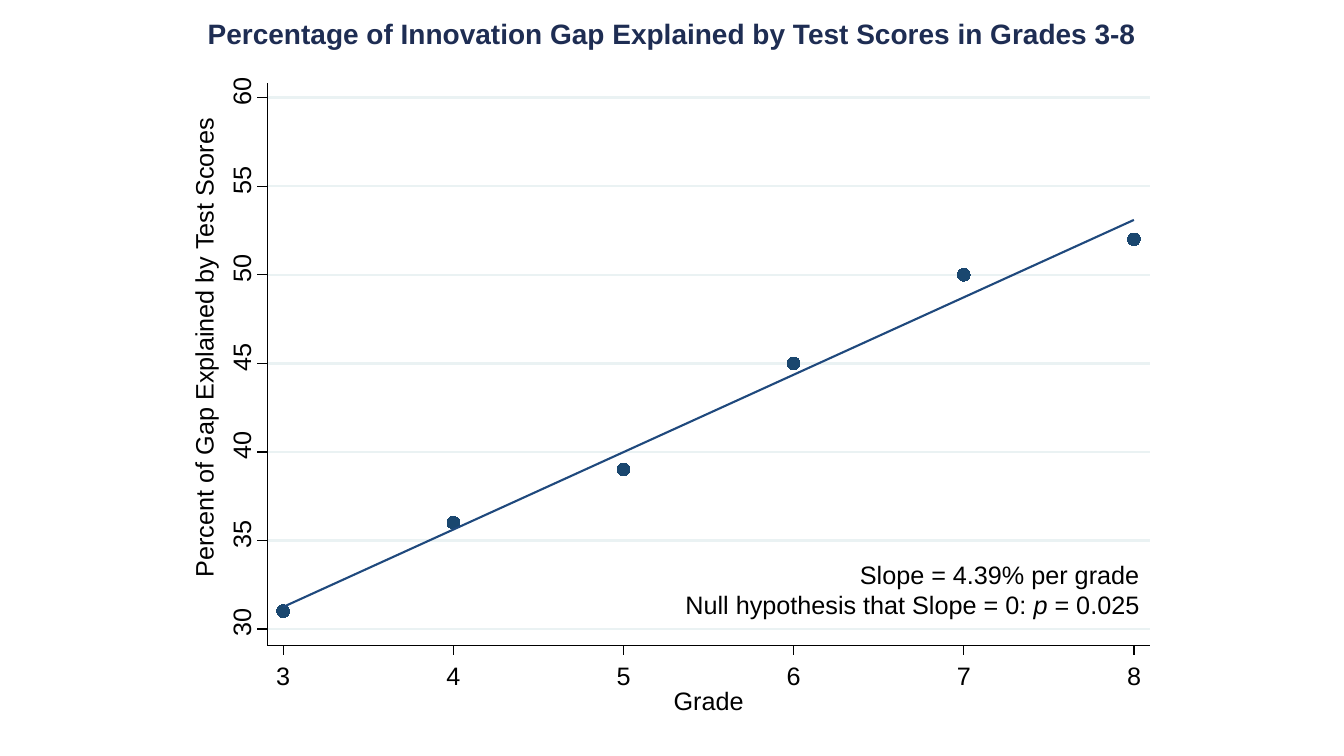
from lxml.etree import SubElement
from pptx import Presentation
from pptx.chart.data import XyChartData
from pptx.dml.color import RGBColor
from pptx.enum.chart import XL_CHART_TYPE as ChartType, XL_MARKER_STYLE as Marker
from pptx.enum.shapes import MSO_CONNECTOR as Connector
from pptx.enum.text import MSO_ANCHOR as Anchor, MSO_AUTO_SIZE as AutoSize, PP_ALIGN as Align
from pptx.oxml import parse_xml
from pptx.oxml.ns import nsdecls, qn
from pptx.util import Pt

TITLE = "Percentage of Innovation Gap Explained by Test Scores in Grades 3-8"
GRADE_TITLE = "Grade"
PERCENT_TITLE = "Percent of Gap Explained by Test Scores"
SERIES_NAME = "Percent of gap explained"
GAP_EXPLAINED = [(3, 31), (4, 36), (5, 39), (6, 45), (7, 50), (8, 52)]
GRADES = range(3, 9)
PERCENTS = range(30, 61, 5)
# Each line is a list of (text, italic) runs.
FIT_NOTE = [
    [("Slope = 4.39% per grade", False)],
    [("Null hypothesis that Slope = 0: ", False), ("p", True), (" = 0.025", False)],
]

FONT = "Arial"
NAVY, BLACK, GRID, DOT, FIT = "1E2D53", "000000", "EAF2F3", "1A476F", "1F497D"

# Boxes are left, top, width, height in points.
TITLE_BOX = (120, 11.6, 720, 24.5)
CHART_BOX = (130, 45, 710, 475)
SCALE_BOX = (202.3, 69.8, 607.7, 379.5)
NOTE_BOX = (478.9, 396, 342, 51)

# The axes stand a little outside the scale.
AXIS_LEFT, AXIS_TOP, AXIS_RIGHT, AXIS_BOTTOM = 190.8, 59, 821.5, 460.8
TICK = 7.2
LABEL_HEIGHT = 21.6
GRADE_LABEL_Y, GRADE_TITLE_Y = 482.4, 500.4
PERCENT_LABEL_X, PERCENT_TITLE_X = 172.1, 145.4
PERCENT_LABEL_SHIFT = -4.4


def color(hex_string):
    return RGBColor.from_string(hex_string)


def set_font(font, size=18, hex_string=BLACK, bold=False):
    font.name, font.size, font.bold = FONT, Pt(size), bold
    font.color.rgb = color(hex_string)


def set_line(line, hex_string, width):
    line.color.rgb = color(hex_string)
    line.width = Pt(width)


def clear_margins(frame):
    frame.margin_left = frame.margin_right = frame.margin_top = frame.margin_bottom = 0


def grade_x(grade):
    return SCALE_BOX[0] + SCALE_BOX[2] * (grade - GRADES[0]) / (GRADES[-1] - GRADES[0])


def percent_y(percent):
    share = (PERCENTS[-1] - percent) / (PERCENTS[-1] - PERCENTS[0])
    return SCALE_BOX[1] + SCALE_BOX[3] * share


def add_title(slide):
    title = slide.shapes.title
    title.left, title.top, title.width, title.height = map(Pt, TITLE_BOX)
    frame = title.text_frame
    clear_margins(frame)
    frame.auto_size, frame.vertical_anchor = AutoSize.NONE, Anchor.TOP
    frame.text = TITLE
    frame.paragraphs[0].alignment = Align.CENTER
    set_font(frame.paragraphs[0].font, 20, NAVY, bold=True)


def add_line(slide, start, end, hex_string=BLACK, width=0.88):
    line = slide.shapes.add_connector(Connector.STRAIGHT, *map(Pt, (*start, *end)))
    set_line(line.line, hex_string, width)
    SubElement(line.element.spPr, qn("a:effectLst"))


def add_label(slide, text, center, width, rotation=0):
    left, top = center[0] - width / 2, center[1] - LABEL_HEIGHT / 2
    box = slide.shapes.add_textbox(*map(Pt, (left, top, width, LABEL_HEIGHT)))
    box.rotation = rotation
    clear_margins(box.text_frame)
    box.text_frame.word_wrap = False
    paragraph = box.text_frame.paragraphs[0]
    paragraph.text = text
    paragraph.alignment = Align.CENTER
    set_font(paragraph.font)


def add_axes(slide):
    for percent in PERCENTS:
        y = percent_y(percent)
        add_line(slide, (AXIS_LEFT, y), (AXIS_RIGHT, y), GRID, 1.75)
        add_line(slide, (AXIS_LEFT, y), (AXIS_LEFT - TICK, y))
        add_label(slide, str(percent), (PERCENT_LABEL_X, y + PERCENT_LABEL_SHIFT), 20, 270)
    for grade in GRADES:
        x = grade_x(grade)
        add_line(slide, (x, AXIS_BOTTOM), (x, AXIS_BOTTOM + TICK))
        add_label(slide, str(grade), (x, GRADE_LABEL_Y), 10)
    corner = (AXIS_LEFT, AXIS_BOTTOM)
    add_line(slide, corner, (AXIS_LEFT, AXIS_TOP))
    add_line(slide, corner, (AXIS_RIGHT, AXIS_BOTTOM))
    middle_x, middle_y = (AXIS_LEFT + AXIS_RIGHT) / 2, 248.4
    add_label(slide, GRADE_TITLE, (middle_x, GRADE_TITLE_Y), 50)
    add_label(slide, PERCENT_TITLE, (PERCENT_TITLE_X, middle_y), 331, 270)


def no_fill():
    return parse_xml(f'<c:spPr {nsdecls("c", "a")}><a:noFill/><a:ln><a:noFill/></a:ln></c:spPr>')


def pin_scale(plot_area):
    """Place the plot area on SCALE_BOX, as fractions of the chart frame."""
    layout = plot_area.find(qn("c:layout"))
    if layout is None:
        layout = plot_area.makeelement(qn("c:layout"))
        plot_area.insert(0, layout)
    left, top, width, height = CHART_BOX
    x, y, w, h = SCALE_BOX
    fractions = ((x - left) / width, (y - top) / height, w / width, h / height)
    settings = [("layoutTarget", "inner"), ("xMode", "edge"), ("yMode", "edge")]
    settings += [(key, f"{part:.4f}") for key, part in zip("xywh", fractions)]
    manual = SubElement(layout, qn("c:manualLayout"))
    for key, value in settings:
        SubElement(manual, qn(f"c:{key}")).set("val", value)


def add_trendline(series_xml):
    trendline = parse_xml(
        f'<c:trendline {nsdecls("c", "a")}><c:spPr><a:ln w="{Pt(1.5)}"><a:solidFill>'
        f'<a:srgbClr val="{FIT}"/></a:solidFill></a:ln></c:spPr>'
        '<c:trendlineType val="linear"/><c:dispRSqr val="0"/><c:dispEq val="0"/></c:trendline>'
    )
    series_xml.find(qn("c:xVal")).addprevious(trendline)


def add_scatter(slide):
    data = XyChartData(number_format="0")
    points = data.add_series(SERIES_NAME)
    for grade, percent in GAP_EXPLAINED:
        points.add_data_point(grade, percent)
    chart = slide.shapes.add_chart(ChartType.XY_SCATTER, *map(Pt, CHART_BOX), data).chart
    chart.has_legend = chart.has_title = False
    set_font(chart.font)

    for axis, ticks in ((chart.category_axis, GRADES), (chart.value_axis, PERCENTS)):
        axis.minimum_scale, axis.maximum_scale = ticks[0], ticks[-1]
        axis.major_unit = ticks.step
        axis.has_major_gridlines = False
        axis.visible = False

    plot = chart.plots[0]
    plot.vary_by_categories = False
    series = plot.series[0]
    series.format.line.fill.background()
    marker = series.marker
    marker.style, marker.size = Marker.CIRCLE, 9
    marker.format.fill.solid()
    marker.format.fill.fore_color.rgb = color(DOT)
    set_line(marker.format.line, DOT, 0.75)

    plot_area = chart.element.find(".//" + qn("c:plotArea"))
    pin_scale(plot_area)
    add_trendline(plot_area.find(".//" + qn("c:ser")))
    plot_area.append(no_fill())
    chart.element.find(qn("c:chart")).addnext(no_fill())


def add_fit_note(slide):
    frame = slide.shapes.add_textbox(*map(Pt, NOTE_BOX)).text_frame
    frame.word_wrap = True
    for index, runs in enumerate(FIT_NOTE):
        paragraph = frame.add_paragraph() if index else frame.paragraphs[0]
        paragraph.alignment = Align.RIGHT
        set_font(paragraph.font)
        for text, italic in runs:
            run = paragraph.add_run()
            run.text = text
            if italic:
                run.font.italic = True


def main():
    presentation = Presentation()
    presentation.slide_width, presentation.slide_height = Pt(960), Pt(540)
    slide = presentation.slides.add_slide(presentation.slide_layouts[5])
    add_title(slide)
    add_axes(slide)
    add_scatter(slide)
    add_fit_note(slide)
    presentation.save("out.pptx")


if __name__ == "__main__":
    main()
